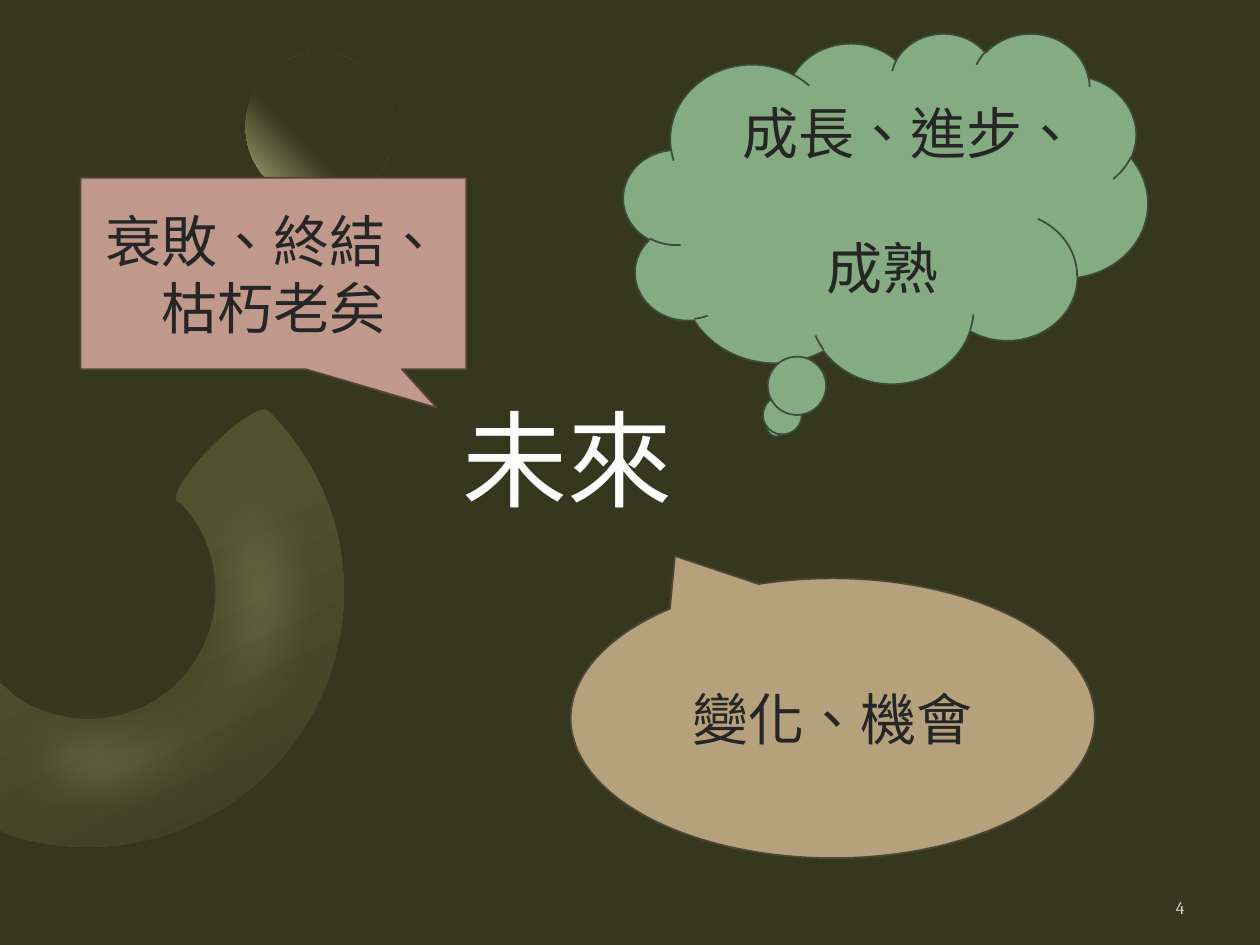
from math import cos, radians, sin

from lxml import etree
from pptx import Presentation
from pptx.dml.color import RGBColor
from pptx.enum.shapes import MSO_SHAPE
from pptx.enum.text import MSO_ANCHOR, MSO_AUTO_SIZE, PP_ALIGN
from pptx.oxml.ns import qn
from pptx.util import Inches, Pt

OVAL = MSO_SHAPE.OVAL
BOX = MSO_SHAPE.RECTANGULAR_CALLOUT
CLOUD = MSO_SHAPE.CLOUD_CALLOUT
BUBBLE = MSO_SHAPE.OVAL_CALLOUT
MIDDLE = MSO_ANCHOR.MIDDLE
LEFT, CENTER, RIGHT = PP_ALIGN.LEFT, PP_ALIGN.CENTER, PP_ALIGN.RIGHT

COLORS = {
    "back": "35371F", "olive": "4F522E", "glow": "AEB377",
    "ink": "262626", "white": "FFFFFF", "number": "D7D7D2",
    "rose": "C1998C", "rose line": "55433D",
    "green": "85AB82", "green line": "3A4B39",
    "tan": "B5A17B", "tan line": "4F4736",
}

# Callouts: shape, place, adjustments, colour, text, left indent
CALLOUTS = [
    (BOX, (0.64, 1.41, 3.06, 1.52), (0.424, 0.702), "rose", "衰敗、終結、枯朽老矣", 0),
    (CLOUD, (4.95, 0.26, 4.16, 2.78), (), "green", "成長、進步、\v成熟", 0.25),
    (BUBBLE, (4.53, 4.59, 4.16, 2.22), (-0.301, -0.58), "tan", "變化、機會", 0),
]

# Outlines in slide inches: one point is a corner, three are a curve
TURN = 315
RING_BOX = (-0.45, 4.33, 3.87, 2.03)
RING = [
    [(2.13, 3.26)], [(2.93, 4.05), (2.93, 5.33), (2.13, 6.13)],
    [(1.59, 6.67), (0.81, 6.84), (0.12, 6.64)],
    [(0, 6.59)], [(0, 5.42)], [(0.14, 5.54)],
    [(0.54, 5.8), (1.07, 5.76), (1.42, 5.41)],
    [(1.81, 5.01), (1.81, 4.37), (1.42, 3.98)],
]
SHEEN_BOX = (-0.53, 3.99, 3.8, 2.37)
SHEEN = [
    [(1.88, 2.99)], [(2.81, 3.92), (2.92, 5.31), (2.12, 6.1)],
    [(1.63, 6.6), (0.9, 6.74), (0.2, 6.55)],
    [(0, 6.49)], [(0, 5.35)], [(0.01, 5.36)],
    [(0.45, 5.61), (0.97, 5.59), (1.29, 5.26)],
    [(1.68, 4.87), (1.63, 4.17), (1.17, 3.71)],
]


def rgb(name):
    return RGBColor.from_string(COLORS[name])


def paint(shape, color):
    shape.shadow.inherit = False
    shape.fill.solid()
    shape.fill.fore_color.rgb = rgb(color)
    shape.line.fill.background()


def shade(shape, stops):
    """Swap the solid fill for a gradient and return its element."""
    solid = shape._element.spPr.find(qn("a:solidFill"))
    grad = etree.Element(qn("a:gradFill"), rotWithShape="1")
    stack = etree.SubElement(grad, qn("a:gsLst"))
    for pos, color in stops:
        stop = etree.SubElement(stack, qn("a:gs"), pos=str(pos * 1000))
        etree.SubElement(stop, qn("a:srgbClr"), val=COLORS[color])
    solid.getparent().replace(solid, grad)
    return grad


def place(shape, spot):
    shape.left, shape.top, shape.width, shape.height = map(Inches, spot)


def trace(shapes, outline, spot):
    """Draw a curved outline inside a box turned by TURN degrees."""
    left, top, width, height = spot
    c, s = cos(radians(-TURN)), sin(radians(-TURN))

    def local(x, y):
        dx, dy = x - left - width / 2, y - top - height / 2
        return dx * c - dy * s + width / 2, dx * s + dy * c + height / 2

    pen = shapes.build_freeform(0, 0)
    pen.add_line_segments([(Inches(width), 0), (Inches(width), Inches(height))])
    shape = pen.convert_to_shape()
    place(shape, spot)
    shape.rotation = TURN
    track = next(shape._element.iter(qn("a:path")))
    for old in list(track):
        track.remove(old)
    track.set("w", str(Inches(width)))
    track.set("h", str(Inches(height)))
    for i, part in enumerate(outline):
        tag = "a:moveTo" if i == 0 else "a:lnTo" if len(part) == 1 else "a:cubicBezTo"
        step = etree.SubElement(track, qn(tag))
        for dot in part:
            x, y = local(*dot)
            etree.SubElement(step, qn("a:pt"), x=str(Inches(x)), y=str(Inches(y)))
    etree.SubElement(track, qn("a:close"))
    return shape


def write(shape, text, size, font, color, align, inset=None):
    frame = shape.text_frame
    frame.text = text
    frame.word_wrap = True
    frame.auto_size = MSO_AUTO_SIZE.NONE
    frame.vertical_anchor = MIDDLE
    if inset is not None:
        frame.margin_left = frame.margin_right = Inches(inset)
        frame.margin_top = frame.margin_bottom = Inches(inset)
    para = frame.paragraphs[0]
    para.alignment = align
    for run in para.runs:
        run.font.size = Pt(size)
        run.font.name = font
        run.font.color.rgb = rgb(color)
        run._r.get_or_add_rPr().set("lang", "zh-TW")
    for gap in para._p.findall(qn("a:br")):
        etree.SubElement(gap, qn("a:rPr"), lang="zh-TW", sz=str(size * 100))
    return para


deck = Presentation()
deck.slide_width, deck.slide_height = Inches(10), Inches(7.5)
slide = deck.slides.add_slide(deck.slide_layouts[5])
shapes = slide.shapes
slide.background.fill.solid()
slide.background.fill.fore_color.rgb = rgb("back")

# Ring, its soft sheen and its cut end
ring = trace(shapes, RING, RING_BOX)
paint(ring, "olive")
grad = shade(ring, [(31, "olive"), (97, "back")])
etree.SubElement(grad, qn("a:lin"), ang=str(110 * 60000), scaled="0")

sheen = trace(shapes, SHEEN, SHEEN_BOX)
paint(sheen, "glow")
props = sheen._element.spPr
tint = props.find(qn("a:solidFill"))[0]
etree.SubElement(tint, qn("a:alpha"), val="40000")
etree.SubElement(props.find(qn("a:effectLst")), qn("a:softEdge"), rad=str(Inches(0.4)))

cap = shapes.add_shape(OVAL, *map(Inches, (1.65, 3.11, 0.23, 1.02)))
cap.rotation = 45
paint(cap, "olive")

# Ball lit from the lower left
ball = shapes.add_shape(OVAL, *map(Inches, (1.95, 0.42, 1.18, 1.18)))
paint(ball, "back")
grad = shade(ball, [(60, "back"), (100, "glow")])
focus = etree.SubElement(grad, qn("a:path"), path="circle")
etree.SubElement(focus, qn("a:fillToRect"), l="100000", b="100000")

# Title
title = shapes.title
place(title, (3.67, 0.6, 5.72, 6.06))
write(title, "未來", 60, "Roboto", "white", LEFT, 0)

# Callouts
for kind, spot, bends, color, text, indent in CALLOUTS:
    note = shapes.add_shape(kind, *map(Inches, spot))
    for i, bend in enumerate(bends):
        note.adjustments[i] = bend
    paint(note, color)
    note.line.color.rgb = rgb(color + " line")
    note.line.width = Pt(1)
    para = write(note, text, 32, "Cambria", "ink", CENTER)
    if indent:
        para._p.get_or_add_pPr().set("marL", str(Inches(indent)))

# Slide number
number = shapes.add_textbox(*map(Inches, (7.55, 7.12, 1.85, 0.17)))
write(number, "4", 10, "Cambria", "number", RIGHT, 0)

deck.save("out.pptx")
